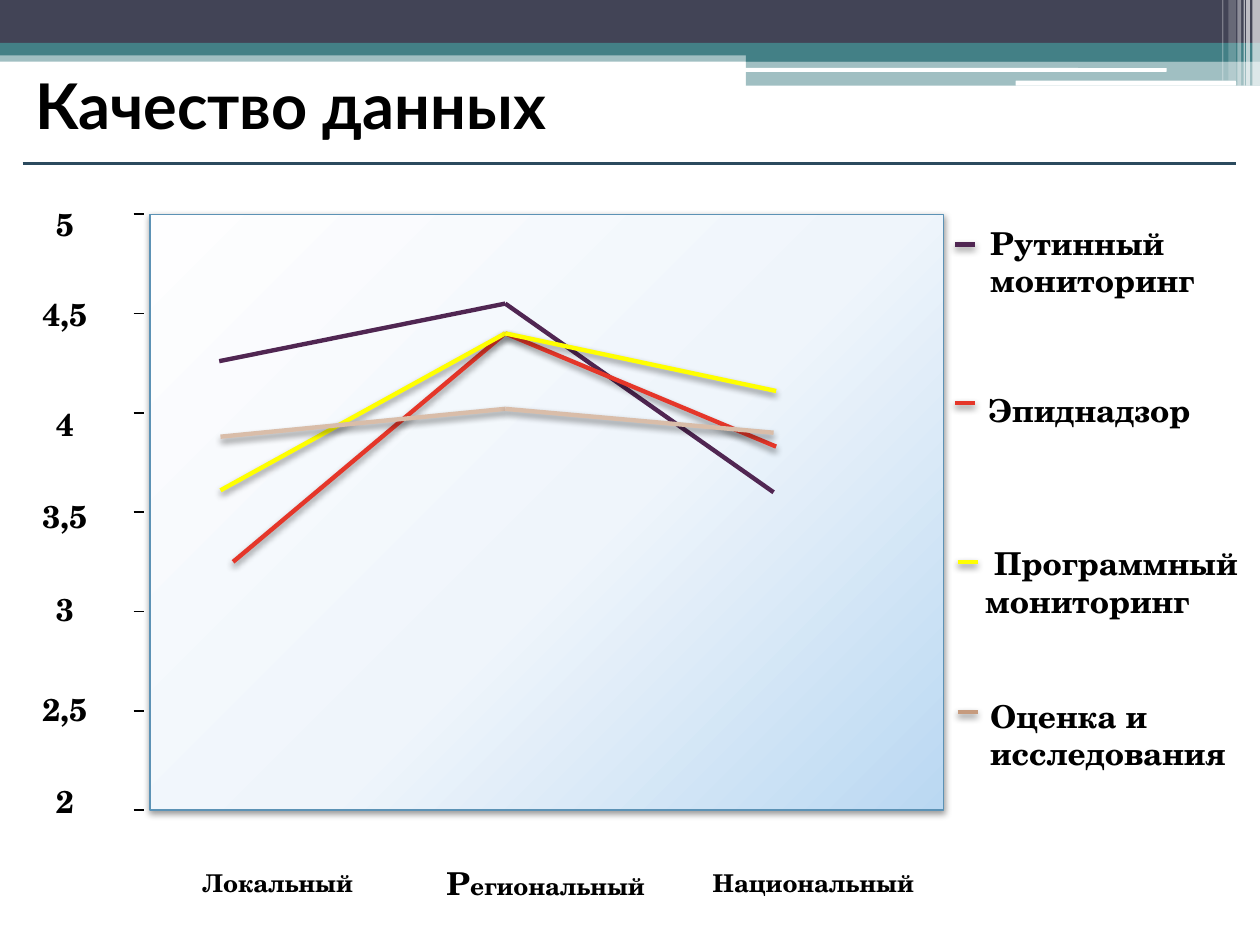
from pptx import Presentation
from pptx.dml.color import RGBColor
from pptx.enum.shapes import MSO_CONNECTOR, MSO_SHAPE
from pptx.enum.text import MSO_ANCHOR, PP_ALIGN
from pptx.oxml import parse_xml
from pptx.oxml.ns import nsdecls, qn
from pptx.util import Inches, Pt
from lxml.etree import SubElement

RECT, ROUND = MSO_SHAPE.RECTANGLE, MSO_SHAPE.ROUNDED_RECTANGLE
PROCESS, STRAIGHT = MSO_SHAPE.FLOWCHART_PROCESS, MSO_CONNECTOR.STRAIGHT
TOP, MIDDLE = MSO_ANCHOR.TOP, MSO_ANCHOR.MIDDLE
LEFT, CENTER = PP_ALIGN.LEFT, PP_ALIGN.CENTER

THEME = {
    "navy": "424456", "teal": "438086", "white": "FFFFFF", "text": "000000",
    "rule": "2B4A5E", "plot_line": "5C92B5",
    "plot_stops": [(0, "FEFEFF"), (55, "EFF5FB"), (100, "BAD8F2")],
    "purple": "502652", "red": "E53629", "yellow": "FFFF00",
    "tan": "D9BDA9", "tan_key": "C69B7E",
    "title_font": "Lato", "body_font": "TeX Gyre Schola",
    "title": 36, "label": 18, "category": 14,
}

# ---- Content ----
TITLE = "Качество данных"

# Header bands: shape, left, top, width, height, colour, opacity in percent
BANDS = [
    (RECT, 0, 0.4, 10, 0.09, "teal", 50),
    (RECT, 0, 0, 10, 0.34, "navy", 100),
    (RECT, 0, 0.34, 10, 0.1, "teal", 100),
    (RECT, 5.92, 0.39, 4.08, 0.1, "teal", 100),
    (RECT, 5.92, 0.48, 4.08, 0.2, "teal", 50),
    (ROUND, 5.91, 0.54, 3.35, 0.03, "white", 100),
    (ROUND, 8.06, 0.64, 1.75, 0.04, "white", 100),
]
# Upright stripes: left, width, height, opacity
STRIPES = [(9.94, 0.06, 0.68, 65), (9.89, 0.03, 0.68, 65), (9.87, 0.01, 0.68, 60),
           (9.82, 0.03, 0.68, 40), (9.75, 0.06, 0.64, 20), (9.7, 0.01, 0.64, 30)]

# Axis labels with the space before each, in points
AXIS_LABELS = [("5", 0), ("4,5", 29.7), ("4", 41.7), ("3,5", 30.9),
               ("3", 31.4), ("2,5", 35.4), ("2", 30.9)]
AXIS_MAX, AXIS_MIN, AXIS_STEP = 5, 2, 0.5

# Series: colour, first x, last x, values, shadow
SERIES = [
    ("purple", 1.74, 6.14, (4.26, 4.55, 3.6), False),
    ("red", 1.85, 6.16, (3.25, 4.4, 3.83), True),
    ("yellow", 1.75, 6.16, (3.61, 4.4, 4.11), True),
    ("tan", 1.75, 6.14, (3.88, 4.02, 3.9), True),
]
# Legend: text, box, anchor, key colour, key left, key y
LEGEND = [
    ("Рутинный мониторинг", (7.76, 1.55, 2.13, 1.05), MIDDLE, "purple", 7.58, 1.94),
    ("Эпиднадзор", (7.74, 2.73, 2.15, 1.05), MIDDLE, "red", 7.58, 3.2),
    (" Программный мониторинг", (7.72, 4.27, 2.4, 1.05), TOP, "yellow", 7.6, 4.46),
    ("Оценка и исследования", (7.76, 5.48, 2.13, 1.05), TOP, "tan_key", 7.6, 5.65),
]
# Categories: left, width, runs of text and size
CATEGORIES = [
    (1.22, 1.97, [("Локальный", "category")]),
    (3.34, 1.98, [("Р", "label"), ("егиональный", "category")]),
    (5.23, 2.45, [("Национальный", "category")]),
]

# ---- Layout ----
PLOT_LEFT, PLOT_TOP, PLOT_WIDTH, PLOT_HEIGHT = 1.19, 1.7, 6.3, 4.73
MIDDLE_X = 4.01
KEY_WIDTH = 0.16

presentation = Presentation()
presentation.slide_width, presentation.slide_height = Inches(10), Inches(7.5)
slide = presentation.slides.add_slide(presentation.slide_layouts[6])


def color(name):
    return RGBColor.from_string(THEME[name])


def value_y(value):
    return PLOT_TOP + (AXIS_MAX - value) / (AXIS_MAX - AXIS_MIN) * PLOT_HEIGHT


def set_effects(shape, opacity=0):
    """Replace inherited effects with none, or with a soft shadow below."""
    properties = shape._element.spPr
    for old in properties.findall(qn("a:effectLst")):
        properties.remove(old)
    effects = SubElement(properties, qn("a:effectLst"))
    if opacity:
        shadow = SubElement(effects, qn("a:outerShdw"), blurRad=str(Pt(4)),
                            dist=str(Pt(2)), dir="5400000", rotWithShape="0")
        black = SubElement(shadow, qn("a:srgbClr"), val="000000")
        SubElement(black, qn("a:alpha"), val=str(opacity * 1000))


def add_line(start, end, color_name, width, shadow=False):
    line = slide.shapes.add_connector(STRAIGHT, *map(Inches, (*start, *end)))
    line.line.color.rgb = color(color_name)
    line.line.width = Pt(width)
    set_effects(line, 45 if shadow else 0)


def add_band(kind, left, top, width, height, color_name, opacity):
    band = slide.shapes.add_shape(kind, *map(Inches, (left, top, width, height)))
    band.fill.solid()
    band.fill.fore_color.rgb = color(color_name)
    band.line.fill.background()
    band.shadow.inherit = False
    if opacity < 100:
        fill_color = band._element.spPr.find(qn("a:solidFill"))[0]
        SubElement(fill_color, qn("a:alpha"), val=str(opacity * 1000))


def add_text(box, paragraphs, anchor=MIDDLE, align=LEFT, font="body_font"):
    """Each paragraph is (space before, [(text, size), ...])."""
    frame = slide.shapes.add_textbox(*map(Inches, box)).text_frame
    frame.word_wrap = True
    frame.vertical_anchor = anchor
    for index, (space, runs) in enumerate(paragraphs):
        paragraph = frame.add_paragraph() if index else frame.paragraphs[0]
        paragraph.alignment = align
        paragraph.space_before = Pt(space)
        for text, size in runs:
            run = paragraph.add_run()
            run.text = text
            run.font.name = THEME[font]
            run.font.size = Pt(THEME[size])
            run.font.bold = True
            run.font.color.rgb = color("text")


# Header
for band in BANDS:
    add_band(*band)
for left, width, height, opacity in STRIPES:
    add_band(RECT, left, 0, width, height, "white", opacity)
add_line((0.18, 1.3), (9.81, 1.3), "rule", 1.5)
add_text((0.18, 0.38, 9.62, 0.9), [(0, [(TITLE, "title")])], font="title_font")

# Plot area with a radial gradient
plot = slide.shapes.add_shape(
    PROCESS, *map(Inches, (PLOT_LEFT, PLOT_TOP, PLOT_WIDTH, PLOT_HEIGHT)))
stops = "".join(f'<a:gs pos="{position * 1000}"><a:srgbClr val="{rgb}"/></a:gs>'
                for position, rgb in THEME["plot_stops"])
plot._element.spPr.insert(2, parse_xml(
    f'<a:gradFill {nsdecls("a")} rotWithShape="1"><a:gsLst>{stops}</a:gsLst>'
    '<a:path path="circle"><a:fillToRect l="-40000" t="-90000" r="140000" b="190000"/>'
    '</a:path></a:gradFill>'))
plot.line.color.rgb = color("plot_line")
plot.line.width = Pt(0.75)
set_effects(plot, 40)

# Axis ticks and labels
for index in range(len(AXIS_LABELS)):
    y = value_y(AXIS_MAX - index * AXIS_STEP)
    add_line((1.06, y), (1.14, y), "text", 1)
add_text((0, 1.4, 1.03, 5.33),
         [(space, [(text, "label")]) for text, space in AXIS_LABELS], align=CENTER)
for left, width, runs in CATEGORIES:
    add_text((left, 6.73, width, 0.55), [(0, runs)], align=CENTER)

# Legend
for text, box, anchor, key, left, y in LEGEND:
    add_text(box, [(0, [(text, "label")])], anchor)
    add_line((left, y), (left + KEY_WIDTH, y), key, 2.5, True)

# Series lines
for name, first_x, last_x, values, shadow in SERIES:
    points = list(zip((first_x, MIDDLE_X, last_x), map(value_y, values)))
    for start, end in zip(points, points[1:]):
        add_line(start, end, name, 2.5, shadow)

presentation.save("out.pptx")
